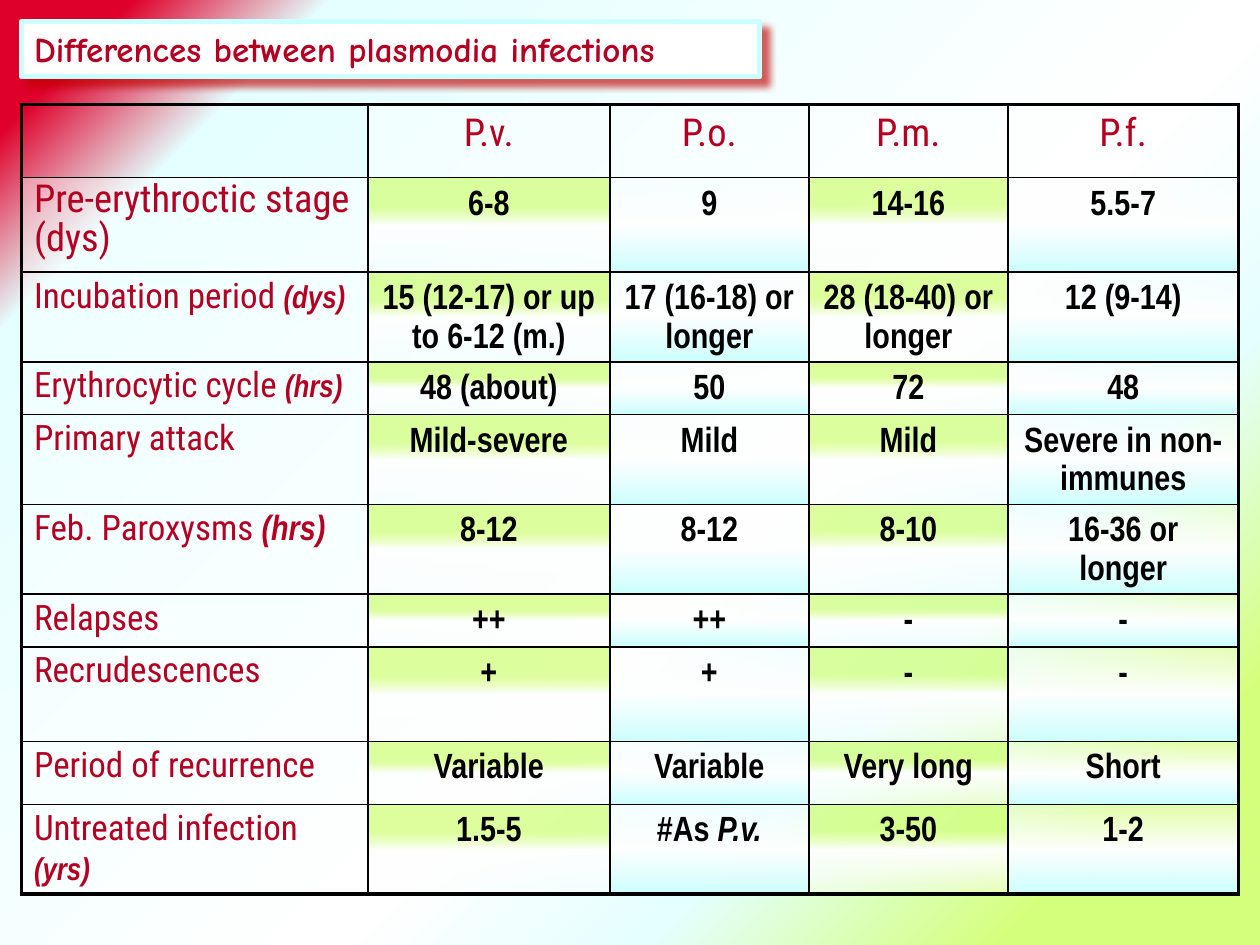
from pptx import Presentation
from pptx import util as u
from pptx.dml.color import RGBColor
from pptx.enum import text as t
from pptx.oxml import parse_xml
from pptx.oxml.ns import nsdecls

RED = RGBColor(0xB4, 0x00, 0x22)
CRIMSON = RGBColor(0xDE, 0x00, 0x2A)
SHADE = RGBColor(0xC0, 0x00, 0x00)
BLACK = RGBColor(0x00, 0x00, 0x00)
WHITE = RGBColor(0xFF, 0xFF, 0xFF)
ICE = RGBColor(0xE5, 0xFF, 0xFF)
CYAN = RGBColor(0xCC, 0xFF, 0xFF)
LIME = RGBColor(0xD4, 0xFF, 0x7D)

HEAD = "Roboto Condensed"
BODY = "Arial Narrow"

COLS = [2.75, 1.92, 1.58, 1.58, 1.83]
HEIGHTS = [0.58, 0.75, 0.67, 0.42, 0.67, 0.5, 0.42, 0.75, 0.5, 0.5]
SPECIES = ["P.v.", "P.o.", "P.m.", "P.f."]

# Label, label size, unit, unit size, values per species
ROWS = [
    ("Pre-erythroctic stage (dys)", 22, "", 0, ["6-8", "9", "14-16", "5.5-7"]),
    ("Incubation period ", 20, "(dys)", 18,
     ["15 (12-17) or up to 6-12 (m.)", "17 (16-18) or longer",
      "28 (18-40) or longer", "12 (9-14)"]),
    ("Erythrocytic cycle ", 20, "(hrs)", 18, ["48 (about)", "50", "72", "48"]),
    ("Primary attack", 20, "", 0,
     ["Mild-severe", "Mild", "Mild", "Severe in non-immunes"]),
    ("Feb. Paroxysms ", 20, "(hrs)", 20,
     ["8-12", "8-12", "8-10", "16-36 or longer"]),
    ("Relapses", 20, "", 0, ["++", "++", "-", "-"]),
    ("Recrudescences", 20, "", 0, ["+", "+", "-", "-"]),
    ("Period of recurrence", 20, "", 0,
     ["Variable", "Variable", "Very long", "Short"]),
    ("Untreated infection ", 20, "(yrs)", 18,
     ["1.5-5", "#As |P.v.", "3-50", "1-2"]),
]


def tint(color, alpha=100):
    return f'<a:srgbClr val="{color}"><a:alpha val="{alpha * 1000}"/></a:srgbClr>'


def solid(color, alpha=100):
    return f'<a:solidFill {nsdecls("a")}>{tint(color, alpha)}</a:solidFill>'


def blend(stops, shape):
    marks = "".join(f'<a:gs pos="{pos * 1000}">{tint(*color)}</a:gs>'
                    for pos, *color in stops)
    return (f'<a:gradFill {nsdecls("a")} rotWithShape="1">'
            f'<a:gsLst>{marks}</a:gsLst>{shape}</a:gradFill>')


def linear(stops, angle):
    return blend(stops, f'<a:lin ang="{angle * 60000}" scaled="0"/>')


def green(start, end, alpha):
    return linear([(0, WHITE, start), (50, WHITE), (end, LIME, alpha)], 270)


def blue(start):
    return linear([(0, WHITE, start), (50, WHITE), (100, CYAN)], 90)


def write(para, words, size=20, font=BODY, color=BLACK, bold=False, italic=False):
    run = para.add_run()
    run.text = words
    run.font.size = u.Pt(size)
    run.font.name = font
    run.font.color.rgb = color
    run.font.bold = bold
    run.font.italic = italic


def backdrop(slide):
    fill = blend([(0, CRIMSON, 52), (6, CRIMSON, 53), (15, ICE), (58, WHITE, 82),
                  (72, ICE), (88, LIME, 81)],
                 '<a:path path="circle"><a:fillToRect r="100000" b="100000"/></a:path>')
    slide._element.cSld.insert(0, parse_xml(
        f'<p:bg {nsdecls("p", "a")}><p:bgPr>{fill}<a:effectLst/></p:bgPr></p:bg>'))


def heading(slide):
    box = slide.shapes.title
    box.left, box.top = u.Inches(0.17), u.Inches(0.17)
    box.width, box.height = u.Inches(5.86), u.Inches(0.44)
    box.fill.solid()
    box.fill.fore_color.rgb = WHITE
    box.line.color.rgb = CYAN
    box.line.width = u.Pt(3)
    box._element.spPr.append(parse_xml(
        f'<a:effectLst {nsdecls("a")}><a:outerShdw blurRad="{u.Pt(4)}" '
        f'dist="{u.Pt(6)}" dir="2700000" algn="tl" rotWithShape="0">'
        f'{tint(SHADE, 63)}</a:outerShdw></a:effectLst>'))
    frame = box.text_frame
    frame.word_wrap = True
    frame.auto_size = t.MSO_AUTO_SIZE.NONE
    frame.vertical_anchor = t.MSO_ANCHOR.TOP
    para = frame.paragraphs[0]
    para.alignment = t.PP_ALIGN.LEFT
    write(para, "Differences between plasmodia infections",
          font="Comic Neue", color=RED, bold=True)
    slide.shapes._spTree.append(box._element)


def dress(cell, row, col, fill):
    """Thick lines on the outer edge, thin ones inside, then the fill."""
    outer = {"L": col == 0, "R": col == len(COLS) - 1,
             "T": row == 0, "B": row == len(ROWS)}
    props = cell._tc.get_or_add_tcPr()
    for side, edge in outer.items():
        props.append(parse_xml(
            f'<a:ln{side} {nsdecls("a")} w="{u.Pt(2.25 if edge else 1)}">'
            f'{solid(BLACK)}</a:ln{side}>'))
    props.append(parse_xml(fill))


def start(cell, centred=True):
    para = cell.text_frame.paragraphs[0]
    para.alignment = t.PP_ALIGN.CENTER if centred else t.PP_ALIGN.LEFT
    para.line_spacing = u.Pt(22)
    para.space_before = u.Pt(6)
    return para


def chart(slide):
    frame = slide.shapes.add_table(
        len(HEIGHTS), len(COLS), u.Inches(0.17), u.Inches(0.83),
        u.Inches(sum(COLS)), u.Inches(sum(HEIGHTS)))
    table = frame.table
    table.first_row = table.horz_banding = False
    for column, width in zip(table.columns, COLS):
        column.width = u.Inches(width)
    for line, height in zip(table.rows, HEIGHTS):
        line.height = u.Inches(height)

    # Header row
    dress(table.cell(0, 0), 0, 0, f'<a:noFill {nsdecls("a")}/>')
    for col, name in enumerate(SPECIES, 1):
        cell = table.cell(0, col)
        para = start(cell)
        para.line_spacing = 1.0
        para.space_before = u.Pt(4.4)
        write(para, name, size=22, font=HEAD, color=RED)
        dress(cell, 0, col, solid(WHITE, 41))

    # Labels and values
    fills = [green(29, 69, 74), blue(27), green(34, 71, 75), blue(31)]
    for row, (label, size, unit, small, values) in enumerate(ROWS, 1):
        cell = table.cell(row, 0)
        para = start(cell, centred=False)
        write(para, label, size=size, font=HEAD, color=RED)
        if unit:
            write(para, unit, size=small, color=RED, bold=True, italic=True)
        dress(cell, row, 0, solid(WHITE, 39))
        for col, (value, fill) in enumerate(zip(values, fills), 1):
            cell = table.cell(row, col)
            para = start(cell)
            # Words after the bar are italic
            for part, words in enumerate(value.split("|")):
                write(para, words, bold=True, italic=part == 1)
            dress(cell, row, col, fill)


def main():
    deck = Presentation()
    deck.slide_width, deck.slide_height = u.Inches(10), u.Inches(7.5)
    slide = deck.slides.add_slide(deck.slide_layouts[5])
    backdrop(slide)
    chart(slide)
    heading(slide)
    deck.save("out.pptx")


if __name__ == "__main__":
    main()
